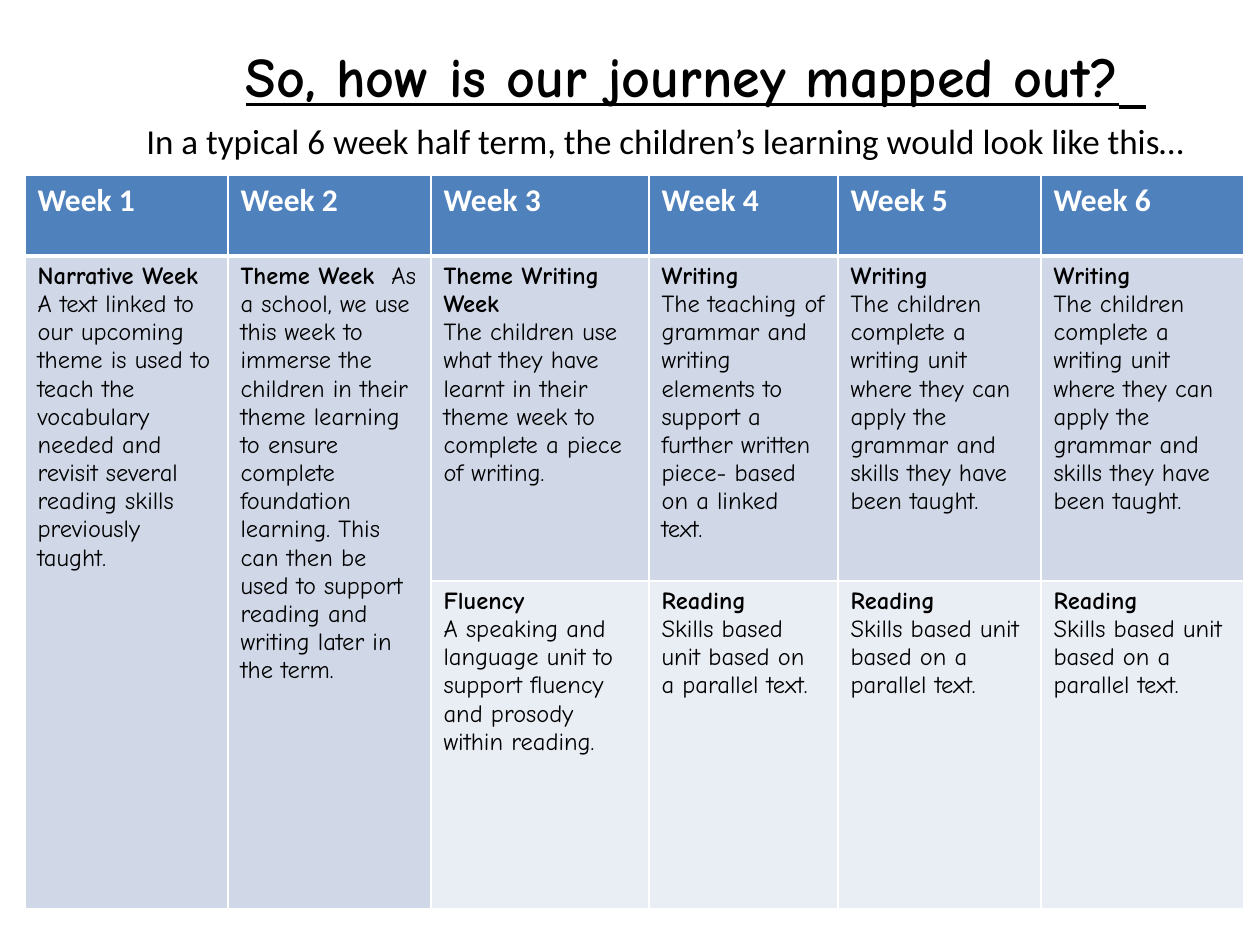
import pptx
import pptx.util
import pptx.dml.color
import pptx.enum.text
import pptx.oxml.ns
from lxml import etree

EMU_PER_PX = 914400 / 126
COMIC, CALIBRI = "Comic Neue", "Calibri"
BLACK, WHITE, BLUE = "000000", "FFFFFF", "4F81BD"
ROW_FILLS = [BLUE, "D0D8E8", "E9EDF4"]
COLUMN_WIDTHS = [203, 203, 218, 189, 203, 203]
ROW_HEIGHTS = [81, 325, 328]

WRITING_UNIT = ("Writing", "The children complete a writing unit where they can apply "
                "the grammar and skills they have been taught.")
READING_UNIT = ("Reading", "Skills based unit based on a parallel text.")
THEME_WEEK = ("Theme Week ", " As a school, we use this week to immerse the children in "
              "their theme learning to ensure complete foundation learning. This can then "
              "be used to support reading and writing later in the term.")
FIRST_UNITS = [
    ("Narrative Week", "A text linked to our upcoming theme is used to teach the vocabulary "
     "needed and revisit several reading skills previously taught."),
    THEME_WEEK,
    ("Theme Writing Week", "The children use what they have learnt in their theme week to "
     "complete a piece of writing."),
    ("Writing", "The teaching of grammar and writing elements to support a further written "
     "piece- based on a linked text."),
    WRITING_UNIT,
    WRITING_UNIT,
]
SECOND_UNITS = [
    ("Fluency", "A speaking and language unit to support fluency and prosody within reading."),
    READING_UNIT,
    READING_UNIT,
    READING_UNIT,
]


def px(n):
    return pptx.util.Emu(round(n * EMU_PER_PX))


def rgb(color):
    return pptx.dml.color.RGBColor.from_string(color)


def add_run(p, text, size, font, color=BLACK, bold=False, underline=False):
    r = p.add_run()
    r.text = text
    r.font.size = pptx.util.Pt(size)
    r.font.name = font
    r.font.color.rgb = rgb(color)
    r.font.bold = bold
    r.font.underline = underline


def add_heading(slide):
    tf = slide.shapes.add_textbox(px(134), px(16), px(1124), px(150)).text_frame
    tf.word_wrap = True
    p = tf.paragraphs[0]
    p.alignment = pptx.enum.text.PP_ALIGN.CENTER
    add_run(p, "So, how is our journey mapped out?", 32, COMIC, bold=True, underline=True)
    add_run(p, " ", 43, COMIC, bold=True, underline=True)
    p = tf.add_paragraph()
    p.space_before = pptx.util.Pt(4)
    add_run(p, "In a typical 6 week half term, the children’s learning would look like this…",
            20, CALIBRI)


def style_cell(cell, fill, top, bottom):
    """Fill a cell and give it white borders; top and bottom are widths in points."""
    tc_pr = cell._tc.get_or_add_tcPr()
    for side, width in (("L", 1), ("R", 1), ("T", top), ("B", bottom)):
        ln = etree.SubElement(tc_pr, pptx.oxml.ns.qn("a:ln" + side), w=str(pptx.util.Pt(width)))
        solid = etree.SubElement(ln, pptx.oxml.ns.qn("a:solidFill"))
        etree.SubElement(solid, pptx.oxml.ns.qn("a:srgbClr"), val=WHITE)
    cell.fill.solid()
    cell.fill.fore_color.rgb = rgb(fill)


def write_unit(cell, unit):
    title, detail = unit
    tf = cell.text_frame
    p = tf.paragraphs[0]
    add_run(p, title, 14, COMIC, bold=True)
    if unit is not THEME_WEEK:
        p = tf.add_paragraph()
    add_run(p, detail, 14, COMIC)


def add_week_table(slide):
    table = slide.shapes.add_table(
        len(ROW_HEIGHTS), len(COLUMN_WIDTHS), px(25), px(175),
        px(sum(COLUMN_WIDTHS)), px(sum(ROW_HEIGHTS))).table
    for column, width in zip(table.columns, COLUMN_WIDTHS):
        column.width = px(width)
    for i, (row, height) in enumerate(zip(table.rows, ROW_HEIGHTS)):
        row.height = px(height)
        for cell in row.cells:
            style_cell(cell, ROW_FILLS[i], 3 if i == 1 else 1, 3 if i == 0 else 1)
    for col in (0, 1):
        table.cell(1, col).merge(table.cell(2, col))
    for col, unit in enumerate(FIRST_UNITS):
        add_run(table.cell(0, col).text_frame.paragraphs[0], f"Week {col + 1}",
                18, CALIBRI, WHITE, bold=True)
        write_unit(table.cell(1, col), unit)
    for col, unit in enumerate(SECOND_UNITS, start=2):
        write_unit(table.cell(2, col), unit)


def main():
    prs = pptx.Presentation()
    prs.slide_width, prs.slide_height = px(1260), px(945)
    slide = prs.slides.add_slide(prs.slide_layouts[6])
    add_heading(slide)
    add_week_table(slide)
    prs.save("out.pptx")


if __name__ == "__main__":
    main()
